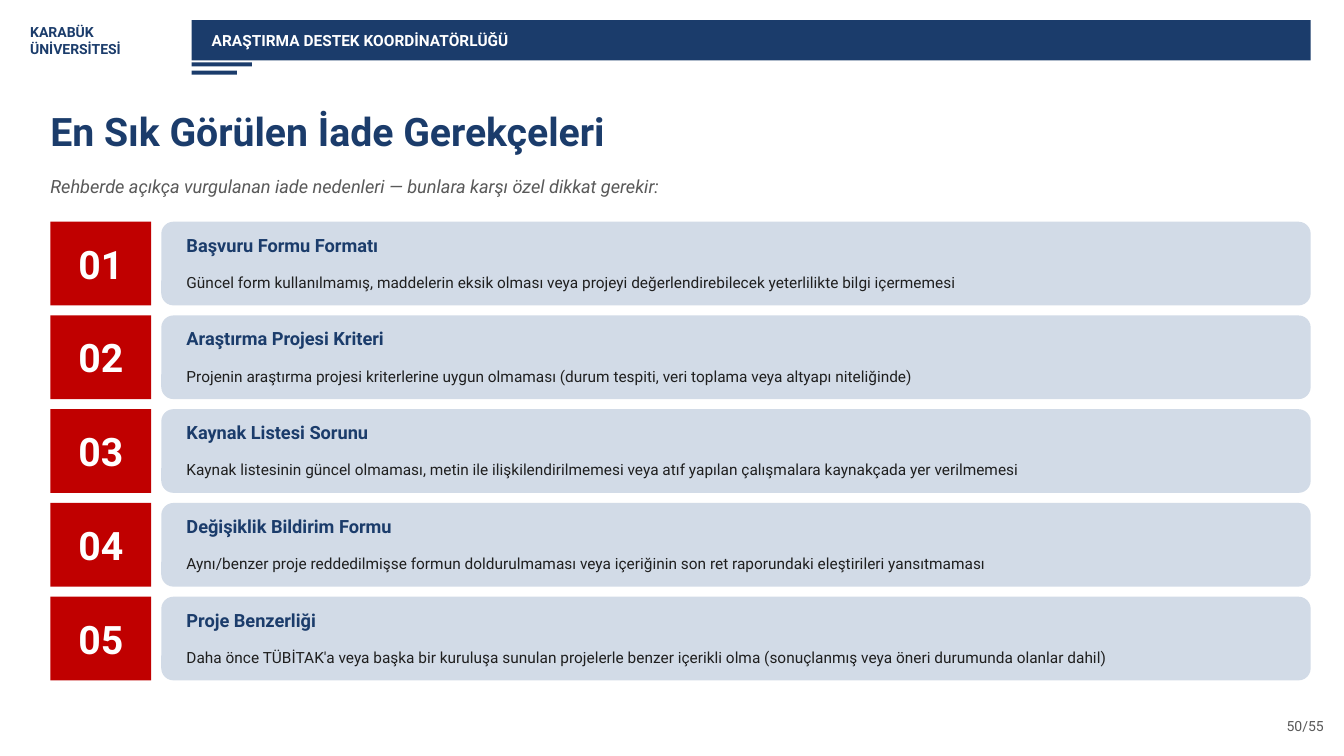
"""Build the slide on the most common reasons for returned applications."""
from pptx import Presentation
from pptx.dml.color import RGBColor
from pptx.enum import shapes as sh, text as tx
from pptx.util import Inches, Pt

FONT = "Roboto"
NAVY, RED, PALE = "1B3C6B", "C00000", "D2DBE7"
WHITE, GREY, INK = "FFFFFF", "595959", "1F1F1F"
LEFT, CENTER, RIGHT = tx.PP_ALIGN.LEFT, tx.PP_ALIGN.CENTER, tx.PP_ALIGN.RIGHT
RECT, ROUND = sh.MSO_SHAPE.RECTANGLE, sh.MSO_SHAPE.ROUNDED_RECTANGLE
TOP, STEP, HIGH = 2.2, 0.93, 0.83

REASONS = [
    ("Başvuru Formu Formatı",
     "Güncel form kullanılmamış, maddelerin eksik olması veya projeyi "
     "değerlendirebilecek yeterlilikte bilgi içermemesi"),
    ("Araştırma Projesi Kriteri",
     "Projenin araştırma projesi kriterlerine uygun olmaması (durum tespiti, "
     "veri toplama veya altyapı niteliğinde)"),
    ("Kaynak Listesi Sorunu",
     "Kaynak listesinin güncel olmaması, metin ile ilişkilendirilmemesi veya "
     "atıf yapılan çalışmalara kaynakçada yer verilmemesi"),
    ("Değişiklik Bildirim Formu",
     "Aynı/benzer proje reddedilmişse formun doldurulmaması veya içeriğinin "
     "son ret raporundaki eleştirileri yansıtmaması"),
    ("Proje Benzerliği",
     "Daha önce TÜBİTAK'a veya başka bir kuruluşa sunulan projelerle benzer "
     "içerikli olma (sonuçlanmış veya öneri durumunda olanlar dahil)"),
]


def color(code):
    """Turn a hex string into a colour."""
    return RGBColor.from_string(code)


def write(shape, words, size, ink, bold=False, italic=False, align=LEFT, inset=0):
    """Fill a shape with text, one paragraph a line."""
    frame = shape.text_frame
    frame.word_wrap = True
    frame.auto_size = tx.MSO_AUTO_SIZE.NONE
    frame.vertical_anchor = tx.MSO_ANCHOR.MIDDLE
    frame.margin_left = Inches(inset)
    frame.margin_right = frame.margin_top = frame.margin_bottom = 0
    frame.text = words
    for para in frame.paragraphs:
        para.alignment = align
        font = para.font
        font.name, font.size = FONT, Pt(size)
        font.bold, font.italic = bold, italic
        font.color.rgb = color(ink)


def label(slide, box, words, size, ink, **style):
    """Add a text box."""
    shape = slide.shapes.add_textbox(*map(Inches, box))
    write(shape, words, size, ink, **style)


def block(slide, box, fill, kind=RECT):
    """Add a plain filled shape without outline or shadow."""
    shape = slide.shapes.add_shape(kind, *map(Inches, box))
    shape.shadow.inherit = False
    shape.fill.solid()
    shape.fill.fore_color.rgb = color(fill)
    shape.line.fill.background()
    return shape


def header(slide):
    """Add the school name, the unit banner and its two stripes."""
    label(slide, (0.3, 0.15, 1.5, 0.5), "KARABÜK\nÜNİVERSİTESİ", 10, NAVY, bold=True)
    bar = block(slide, (1.9, 0.2, 11.1, 0.4), NAVY)
    write(bar, "ARAŞTIRMA DESTEK KOORDİNATÖRLÜĞÜ", 11, WHITE, bold=True, inset=0.2)
    for top, wide in ((0.62, 0.6), (0.7, 0.45)):
        block(slide, (1.9, top, wide, 0.04), NAVY)


def heading(slide, words):
    """Place and format the slide title."""
    title = slide.shapes.title
    title.left, title.top = Inches(0.5), Inches(0.95)
    title.width, title.height = Inches(12.3), Inches(0.7)
    write(title, words, 28, NAVY, bold=True)


def reason(slide, index, name, detail):
    """Add one numbered reason row."""
    top = TOP + index * STEP
    badge = block(slide, (0.5, top, 1, HIGH), RED)
    write(badge, f"{index + 1:02d}", 28, WHITE, bold=True, align=CENTER)
    card = block(slide, (1.6, top, 11.4, HIGH), PALE, ROUND)
    card.adjustments[0] = 0.145
    label(slide, (1.85, top + 0.08, 11, 0.3), name, 13, NAVY, bold=True)
    label(slide, (1.85, top + 0.4, 11, 0.4), detail, 11, INK)


def main():
    """Build and save the slide."""
    deck = Presentation()
    deck.slide_width, deck.slide_height = Inches(13.33), Inches(7.5)
    slide = deck.slides.add_slide(deck.slide_layouts[5])
    header(slide)
    heading(slide, "En Sık Görülen İade Gerekçeleri")
    label(slide, (0.5, 1.65, 12.3, 0.4),
          "Rehberde açıkça vurgulanan iade nedenleri — bunlara karşı özel dikkat gerekir:",
          13, GREY, italic=True)
    for index, (name, detail) in enumerate(REASONS):
        reason(slide, index, name, detail)
    label(slide, (12.13, 7.05, 1, 0.3), "50/55", 10, GREY, align=RIGHT)
    deck.save("out.pptx")


if __name__ == "__main__":
    main()
